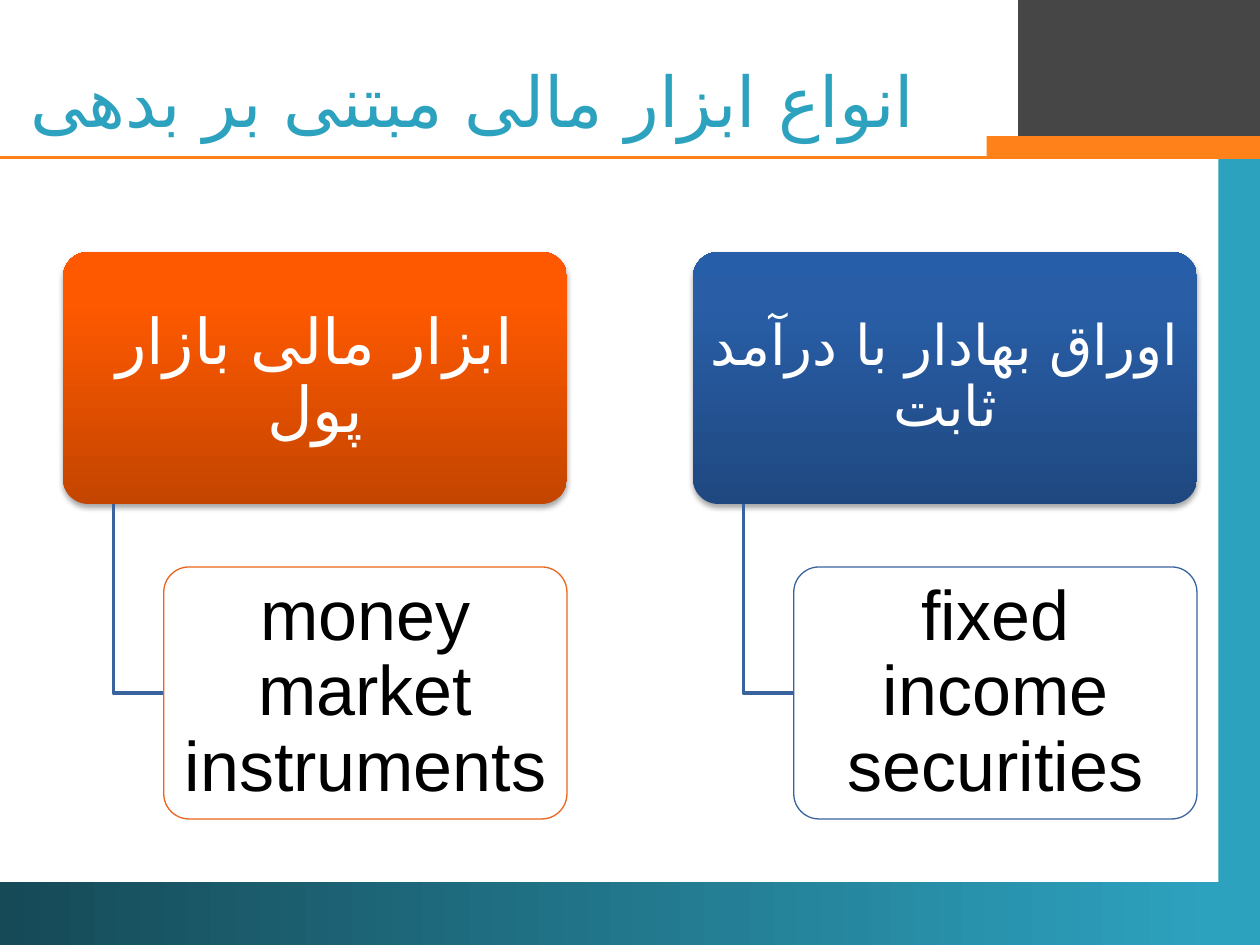
"""Build a slide on the two kinds of debt-based financial instruments."""
from lxml.etree import SubElement
from pptx import Presentation
from pptx.dml.color import RGBColor
from pptx.enum.shapes import MSO_CONNECTOR as Link, MSO_SHAPE as Kind
from pptx.enum.text import MSO_ANCHOR as Anchor, MSO_AUTO_SIZE as Fit, PP_ALIGN as Align
from pptx.oxml.ns import qn
from pptx.util import Pt

PX = 9144
THEME = {
    "font": "Arial", "script": "DejaVu Sans",
    "teal": "2DA2BF", "deep": "164A57", "gray": "464646",
    "orange": "FF8119", "white": "FFFFFF", "black": "000000", "blue": "39639D",
    "title": 40, "child": 40, "rule": 2.25, "stem": 2, "edge": 0.75,
}
TITLE = "انواع ابزار مالی مبتنی بر بدهی"
BARS = [
    ((967, 25, 33, 725), "teal"),
    ((0, 700, 968, 50), "deep"),
    ((808, 0, 192, 108), "gray"),
    ((783, 108, 217, 17), "orange"),
]
TREES = [
    {"head": "ابزار مالی بازار پول", "size": 36, "child": "money market instruments",
     "edge": "EB641B", "stops": [(0, "C44500"), (80, "FE5900"), (100, "FF5A00")]},
    {"head": "اوراق بهادار با درآمد ثابت", "size": 32, "child": "fixed income securities",
     "edge": THEME["blue"], "stops": [(0, "1F4880"), (80, "295EA7"), (100, "265EAA")]},
]
LEFT, TOP, STEP = 50, 200, 500
WIDE, HIGH, GAP = 400, 200, 50
STEM, INDENT = 40, 80


def rgb(code):
    return RGBColor.from_string(code)


def emu(*nums):
    return [num * PX for num in nums]


def paint(shape, code):
    shape.fill.solid()
    shape.fill.fore_color.rgb = rgb(code)


def blend(shape, stops, angle):
    shape.fill.gradient()
    grad = shape.fill._xPr.find(qn("a:gradFill"))
    for node in list(grad):
        grad.remove(node)
    row = SubElement(grad, qn("a:gsLst"))
    for pos, code in stops:
        stop = SubElement(row, qn("a:gs"), pos=str(pos * 1000))
        SubElement(stop, qn("a:srgbClr"), val=code)
    SubElement(grad, qn("a:lin"), ang=str(angle * 60000), scaled="0")


def shade(shape):
    glow = SubElement(shape._element.spPr.find(qn("a:effectLst")), qn("a:outerShdw"),
                      blurRad=str(Pt(3.1)), dist=str(Pt(1.8)), dir="5400000", rotWithShape="0")
    tint = SubElement(glow, qn("a:srgbClr"), val=THEME["black"])
    SubElement(tint, qn("a:alpha"), val="35000")


def write(shape, text, size, code, rtl=False, pad=(7, 5), lead=0.9):
    frame = shape.text_frame
    frame.text = text
    frame.word_wrap = True
    frame.auto_size = Fit.NONE
    frame.vertical_anchor = Anchor.MIDDLE
    frame.margin_left = frame.margin_right = pad[0] * PX
    frame.margin_top = frame.margin_bottom = pad[1] * PX
    para = frame.paragraphs[0]
    para.alignment = Align.CENTER
    para.line_spacing = lead
    run = para.runs[0]
    run.font.size = Pt(size)
    run.font.name = THEME["font"]
    run.font.color.rgb = rgb(code)
    if rtl:
        para._p.get_or_add_pPr().set("rtl", "1")
        props = run._r.get_or_add_rPr()
        props.set("lang", "fa-IR")
        SubElement(props, qn("a:cs"), typeface=THEME["script"])


def block(slide, kind, box):
    shape = slide.shapes.add_shape(kind, *emu(*box))
    shape.shadow.inherit = False
    shape.line.fill.background()
    if kind == Kind.ROUNDED_RECTANGLE:
        shape.adjustments[0] = 0.1
    return shape


def frame(slide):
    for box, name in BARS:
        bar = block(slide, Kind.RECTANGLE, box)
        if name == "deep":
            blend(bar, [(0, THEME["deep"]), (100, THEME["teal"])], 0)
        else:
            paint(bar, THEME[name])
    rule = slide.shapes.add_connector(Link.STRAIGHT, *emu(1000, 125, 0, 125))
    rule.line.color.rgb = rgb(THEME["orange"])
    rule.line.width = Pt(THEME["rule"])
    SubElement(rule._element.spPr, qn("a:effectLst"))


def tree(slide, data, left):
    head = block(slide, Kind.ROUNDED_RECTANGLE, (left, TOP, WIDE, HIGH))
    blend(head, data["stops"], 270)
    shade(head)
    write(head, data["head"], data["size"], THEME["white"], rtl=True)

    low = TOP + HIGH
    top = low + GAP
    mid = top + HIGH // 2
    pen = slide.shapes.build_freeform(*emu(left + STEM, low))
    pen.add_line_segments([emu(left + STEM, mid), emu(left + INDENT, mid)], close=False)
    stem = pen.convert_to_shape()
    stem.shadow.inherit = False
    stem.fill.background()
    stem.line.color.rgb = rgb(THEME["blue"])
    stem.line.width = Pt(THEME["stem"])

    child = block(slide, Kind.ROUNDED_RECTANGLE, (left + INDENT, top, WIDE - INDENT, HIGH))
    paint(child, THEME["white"])
    tint = child._element.spPr.find(qn("a:solidFill"))[0]
    SubElement(tint, qn("a:alpha"), val="90000")
    child.line.color.rgb = rgb(data["edge"])
    child.line.width = Pt(THEME["edge"])
    write(child, data["child"], THEME["child"], THEME["black"], pad=(8, 6))


def main():
    deck = Presentation()
    deck.slide_width, deck.slide_height = emu(1000, 750)
    slide = deck.slides.add_slide(deck.slide_layouts[5])
    frame(slide)
    title = slide.shapes.title
    title.left, title.top, title.width, title.height = emu(0, 50, 750, 58)
    write(title, TITLE, THEME["title"], THEME["teal"], rtl=True, lead=1.0)
    for num, data in enumerate(TREES):
        tree(slide, data, LEFT + num * STEP)
    deck.save("out.pptx")


if __name__ == "__main__":
    main()
